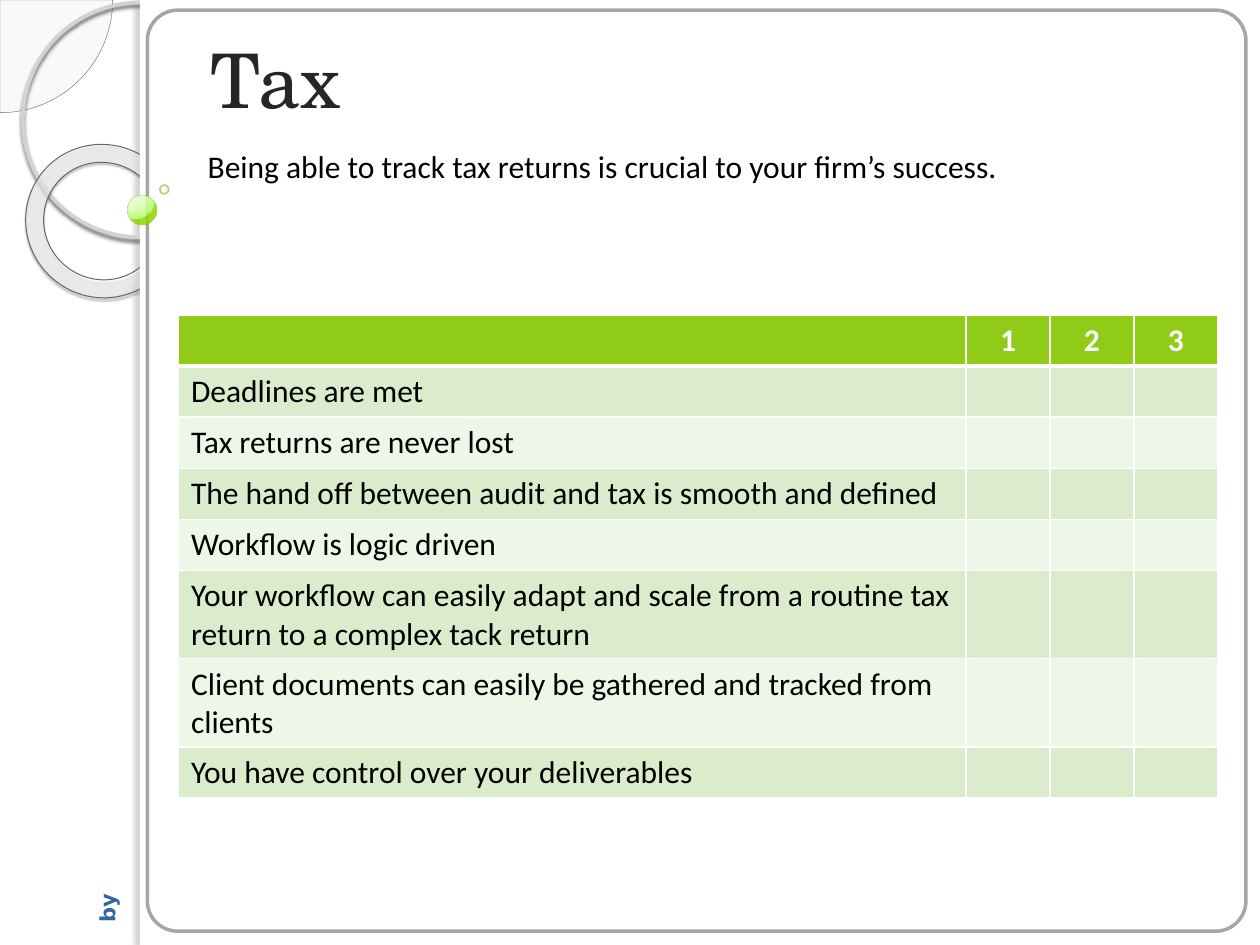
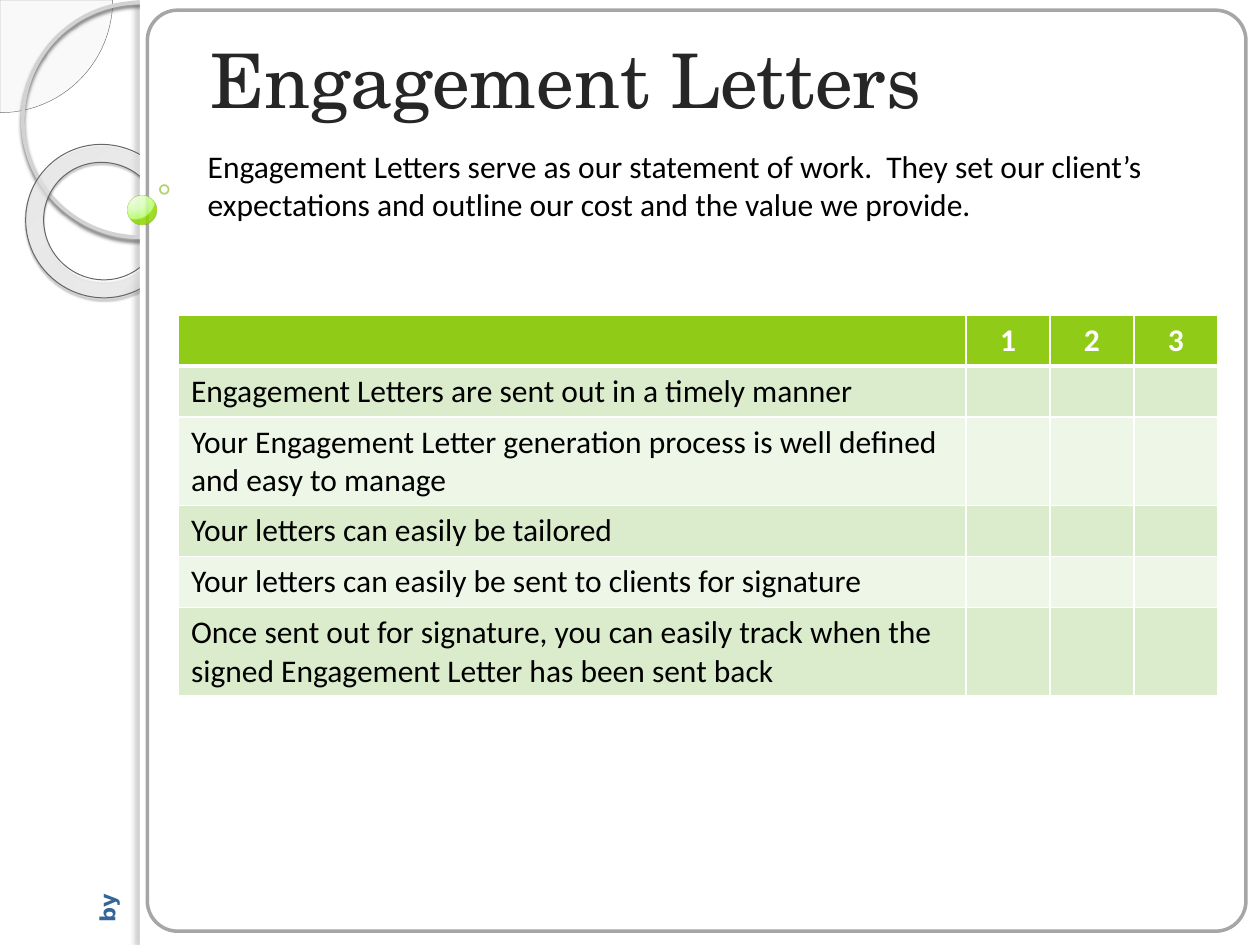
from lxml import etree
from pptx import Presentation
from pptx.dml.color import RGBColor
from pptx.enum import shapes, text
from pptx.oxml.ns import qn
from pptx.util import Pt

WHITE, BLACK, INK, BLUE = "FFFFFF", "000000", "262626", "336699"
HEADER_GREEN, BAND_DARK, BAND_LIGHT = "8FCB17", "DBECCC", "EEF6E8"
TITLE_FONT, BODY_FONT, FOOTER_FONT = "TeX Gyre Schola", "Calibri", "DejaVu Sans"
ROW_HEIGHT = 29.2
COLUMN_WIDTHS = [450, 48, 48, 48]
RATINGS = ["", "1", "2", "3"]
KIND = shapes.MSO_SHAPE

RING_GRADIENT = {"stops": [(0, "F5F5F5", 70), (70, "FAFAFA", 55), (100, "707070", 60)],
                 "focus": (-408, -50, 508, 150)}
BALL_GRADIENT = {"stops": [(0, "EDFFDE", 95), (50, "DCFFBD", 90), (95, "B5FF67", 88),
                           (100, "90D800", 85)],
                 "focus": (25, 12, 75, 88)}

CHECKLISTS = [
    ("Tax",
     "Being able to track tax returns is crucial to your firm’s success.",
     ["Deadlines are met",
      "Tax returns are never lost",
      "The hand off between audit and tax is smooth and defined",
      "Workflow is logic driven",
      "Your workflow can easily adapt and scale from a routine tax return to a complex tack return",
      "Client documents can easily be gathered and tracked from clients",
      "You have control over your deliverables"]),
    ("Engagement Letters",
     "Engagement Letters serve as our statement of work.  They set our client’s "
     "expectations and outline our cost and the value we provide.",
     ["Engagement Letters are sent out in a timely manner",
      "Your Engagement Letter generation process is well defined and easy to manage",
      "Your letters can easily be tailored",
      "Your letters can easily be sent to clients for signature",
      "Once sent out for signature, you can easily track when the signed Engagement Letter "
      "has been sent back"]),
]


def color(value):
    return RGBColor.from_string(value)


def add_node(parent, tag, **attributes):
    node = etree.SubElement(parent, qn(tag))
    for name, value in attributes.items():
        node.set(name, str(value))
    return node


def add_color_node(parent, value, alpha=100):
    node = add_node(parent, "a:srgbClr", val=value)
    if alpha < 100:
        add_node(node, "a:alpha", val=alpha * 1000)


def set_alpha(solid_fill, alpha):
    if alpha < 100:
        add_node(solid_fill.find(qn("a:srgbClr")), "a:alpha", val=alpha * 1000)


def fill_gradient(shape, stops, focus):
    shape.fill.background()
    properties = shape._element.spPr
    gradient = etree.Element(qn("a:gradFill"), rotWithShape="1")
    stop_list = add_node(gradient, "a:gsLst")
    for position, value, alpha in stops:
        add_color_node(add_node(stop_list, "a:gs", pos=position * 1000), value, alpha)
    center = add_node(gradient, "a:path", path="circle")
    sides = {side: share * 1000 for side, share in zip("ltrb", focus)}
    add_node(center, "a:fillToRect", **sides)
    properties.replace(properties.find(qn("a:noFill")), gradient)


def add_shadow(shape, value, alpha, blur, distance, angle):
    effects = shape._element.spPr.find(qn("a:effectLst"))
    shadow = add_node(effects, "a:outerShdw", blurRad=Pt(blur), dist=Pt(distance),
                      dir=angle * 60000, algn="ctr", rotWithShape=0)
    add_color_node(shadow, value, alpha)


def add_figure(page, kind, frame, fill=None, fill_alpha=100, gradient=None, line=None,
               line_alpha=100, shadow=None, adjustments=(), rotation=0):
    shape = page.shapes.add_shape(kind, *map(Pt, frame))
    shape.rotation = rotation
    shape.shadow.inherit = False
    for index, value in enumerate(adjustments):
        shape.adjustments[index] = value
    if gradient:
        fill_gradient(shape, **gradient)
    elif fill:
        shape.fill.solid()
        shape.fill.fore_color.rgb = color(fill)
        set_alpha(shape._element.spPr.find(qn("a:solidFill")), fill_alpha)
    else:
        shape.fill.background()
    if line:
        line_color, width = line
        shape.line.color.rgb = color(line_color)
        shape.line.width = Pt(width)
        set_alpha(shape._element.spPr.find(qn("a:ln")).find(qn("a:solidFill")), line_alpha)
    else:
        shape.line.fill.background()
    if shadow:
        add_shadow(shape, *shadow)


def write(frame, words, size, font, ink, bold=False, align=text.PP_ALIGN.LEFT):
    para = frame.paragraphs[0]
    para.alignment = align
    span = para.add_run()
    span.text = words
    span.font.size = Pt(size)
    span.font.name = font
    span.font.bold = bold
    span.font.color.rgb = color(ink)


def add_text(page, frame, words, size, font, ink, bold=False,
             anchor=text.MSO_ANCHOR.TOP, rotation=0):
    box = page.shapes.add_textbox(*map(Pt, frame))
    box.rotation = rotation
    box.text_frame.word_wrap = True
    box.text_frame.vertical_anchor = anchor
    write(box.text_frame, words, size, font, ink, bold)


def style_cell(cell, fill, top, bottom):
    properties = cell._tc.get_or_add_tcPr()
    for side, width in (("L", 1), ("R", 1), ("T", top), ("B", bottom)):
        border = add_node(properties, "a:ln" + side, w=Pt(width))
        add_color_node(add_node(border, "a:solidFill"), WHITE)
    cell.fill.solid()
    cell.fill.fore_color.rgb = color(fill)


def add_checklist(page, statements):
    row_count = len(statements) + 1
    table = page.shapes.add_table(row_count, len(COLUMN_WIDTHS), Pt(102), Pt(180),
                                  Pt(sum(COLUMN_WIDTHS)), Pt(ROW_HEIGHT * row_count)).table
    for column, width in zip(table.columns, COLUMN_WIDTHS):
        column.width = Pt(width)
    for index, row in enumerate(table.rows):
        row.height = Pt(ROW_HEIGHT)
        band = BAND_DARK if index % 2 else BAND_LIGHT
        for cell in row.cells:
            style_cell(cell, band if index else HEADER_GREEN,
                       top=3 if index == 1 else 1, bottom=1 if index else 3)
    for column, rating in enumerate(RATINGS):
        if rating:
            write(table.cell(0, column).text_frame, rating, 18, BODY_FONT, WHITE,
                  bold=True, align=text.PP_ALIGN.CENTER)
    for index, statement in enumerate(statements, 1):
        write(table.cell(index, 0).text_frame, statement, 18, BODY_FONT, BLACK)


def add_backdrop(page):
    add_figure(page, KIND.RECTANGLE, (80, 0, 6, 540), fill=WHITE,
               shadow=("3F3F3F", 25, 3, 3, 180))
    add_figure(page, KIND.PIE, (-64.4, -64.4, 128.8, 128.8), fill="EEEEEE", fill_alpha=33,
               line=("6D6D6D", 0.25), adjustments=(0, 54))
    add_figure(page, KIND.OVAL, (13, 1.5, 134, 134), line=("D2D2D2", 2.15),
               shadow=("5E5E5E", 85, 2, 2, 90))
    add_figure(page, KIND.DONUT, (14.4, 82.8, 88.6, 87.1), gradient=RING_GRADIENT,
               line=("666666", 0.58), shadow=("2F2F2F", 35, 1, 1.2, 75),
               adjustments=(0.118,), rotation=38.6)
    add_figure(page, KIND.RECTANGLE, (80, 0, 640, 540), fill=WHITE)
    add_figure(page, KIND.ROUNDED_RECTANGLE, (84.2, 5.8, 627.8, 526.3), fill=WHITE,
               line=("A6A6A6", 2), adjustments=(0.033,))
    add_figure(page, KIND.OVAL, (72.7, 111.6, 16.6, 16.6), gradient=BALL_GRADIENT,
               line=("8BCB0D", 0.16), line_alpha=60)
    add_figure(page, KIND.OVAL, (91.4, 105.8, 5, 5), line=("7EB314", 1), line_alpha=60)
    add_text(page, (43.2, 505.4, 36, 21.6), "by", 12, FOOTER_FONT, BLUE,
             bold=True, rotation=270)


def main():
    deck = Presentation()
    deck.slide_width, deck.slide_height = Pt(720), Pt(540)
    for title, introduction, statements in CHECKLISTS:
        page = deck.slides.add_slide(deck.slide_layouts[6])
        add_backdrop(page)
        add_checklist(page, statements)
        add_text(page, (113, 0, 583, 90), title, 43, TITLE_FONT, INK,
                 anchor=text.MSO_ANCHOR.MIDDLE)
        add_text(page, (111.6, 80.6, 583, 51), introduction, 18, BODY_FONT, BLACK)
    deck.save("out.pptx")


if __name__ == "__main__":
    main()
